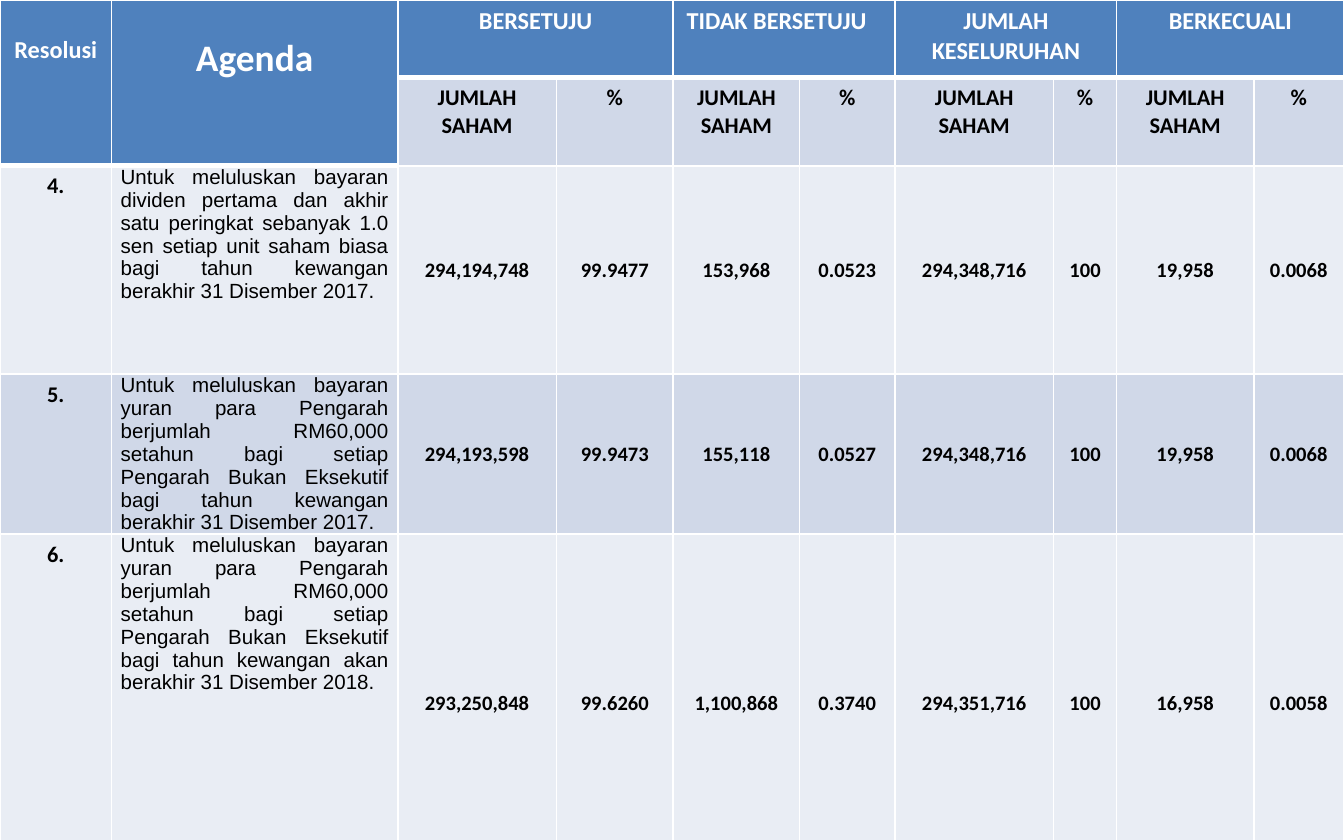
import pptx
import pptx.util
import pptx.dml.color
import pptx.enum.text
import pptx.oxml.ns
import lxml.etree

Pt = pptx.util.Pt
ALIGN = pptx.enum.text.PP_ALIGN
MIDDLE = pptx.enum.text.MSO_ANCHOR.MIDDLE
TOP = pptx.enum.text.MSO_ANCHOR.TOP

HUE = {"head": "4F81BD", "dark": "D0D8E8", "pale": "E9EDF4",
       "white": "FFFFFF", "black": "000000"}
COLS = [59.76, 153.36, 84.96, 62.64, 67.68, 51.12, 84.96, 33.84, 73.44, 48.24]
ROWS = [41.76, 46.08, 111.6, 76.32, 181.44]
GROUPS = ["BERSETUJU", "TIDAK BERSETUJU", "JUMLAH KESELURUHAN", "BERKECUALI"]
ITEMS = [
    ("4.", "Untuk meluluskan bayaran dividen pertama dan akhir satu peringkat "
     "sebanyak 1.0 sen setiap unit saham biasa bagi tahun kewangan berakhir "
     "31 Disember 2017.",
     "294,194,748 99.9477 153,968 0.0523 294,348,716 100 19,958 0.0068"),
    ("5.", "Untuk meluluskan bayaran yuran para Pengarah berjumlah RM60,000 "
     "setahun bagi setiap Pengarah Bukan Eksekutif bagi tahun kewangan "
     "berakhir 31 Disember 2017.",
     "294,193,598 99.9473 155,118 0.0527 294,348,716 100 19,958 0.0068"),
    ("6.", "Untuk meluluskan bayaran yuran para Pengarah berjumlah RM60,000 "
     "setahun bagi setiap Pengarah Bukan Eksekutif bagi tahun kewangan akan "
     "berakhir 31 Disember 2018.",
     "293,250,848 99.6260 1,100,868 0.3740 294,351,716 100 16,958 0.0058"),
]


def color(name):
    return pptx.dml.color.RGBColor.from_string(HUE[name])


def edge(cell, base):
    qn = pptx.oxml.ns.qn
    props = cell._tc.get_or_add_tcPr()
    for side in "LRTB":
        width = base if side == "B" else 1
        line = lxml.etree.SubElement(props, qn("a:ln" + side), w=str(Pt(width)))
        fill = lxml.etree.SubElement(line, qn("a:solidFill"))
        lxml.etree.SubElement(fill, qn("a:srgbClr"), val=HUE["white"])


def paint(cell, name, base=1):
    edge(cell, base)
    cell.fill.solid()
    cell.fill.fore_color.rgb = color(name)


def write(cell, text, size, ink="black", align=ALIGN.CENTER, font="Calibri",
          bold=True, pad=(7.2, 3.6), top=None, anchor=TOP):
    cell.margin_left = cell.margin_right = Pt(pad[0])
    cell.margin_bottom = Pt(pad[1])
    cell.margin_top = Pt(pad[1] if top is None else top)
    cell.vertical_anchor = anchor
    cell.text_frame.text = text
    para = cell.text_frame.paragraphs[0]
    para.alignment = align
    run = para.runs[0].font
    run.size, run.name, run.bold = Pt(size), font, bold
    run.color.rgb = color(ink)


def heads(grid):
    for col in range(len(COLS)):
        paint(grid.cell(0, col), "head", 3)
        paint(grid.cell(1, col), "head" if col < 2 else "dark", 3 if col < 2 else 1)
    for col, (text, size) in enumerate([("Resolusi", 13), ("Agenda", 20)]):
        grid.cell(0, col).merge(grid.cell(1, col))
        write(grid.cell(0, col), text, size, "white", top=19)
    for i, text in enumerate(GROUPS):
        col = 2 + 2 * i
        grid.cell(0, col).merge(grid.cell(0, col + 1))
        align = ALIGN.LEFT if i == 1 else ALIGN.CENTER
        write(grid.cell(0, col), text, 13, "white", align)
        write(grid.cell(1, col), "JUMLAH SAHAM", 12)
        write(grid.cell(1, col + 1), "%", 12)


def votes(grid):
    tight = (4.9, 0)
    for row, (mark, text, counts) in enumerate(ITEMS, 2):
        for col in range(len(COLS)):
            paint(grid.cell(row, col), "dark" if row % 2 else "pale")
        write(grid.cell(row, 0), mark, 12)
        write(grid.cell(row, 1), text, 11, align=ALIGN.JUSTIFY, font="Arial",
              bold=False, pad=tight)
        for col, count in enumerate(counts.split(), 2):
            write(grid.cell(row, col), count, 11, pad=tight, anchor=MIDDLE)


def results(slide, left, top, width, height):
    frame = slide.shapes.add_table(len(ROWS), len(COLS), Pt(left), Pt(top),
                                   Pt(width), Pt(height))
    grid = frame.table
    for col, size in zip(grid.columns, COLS):
        col.width = Pt(size)
    for row, size in zip(grid.rows, ROWS):
        row.height = Pt(size)
    heads(grid)
    votes(grid)


def main():
    deck = pptx.Presentation()
    deck.slide_width, deck.slide_height = Pt(720), Pt(450)
    slide = deck.slides.add_slide(deck.slide_layouts[6])
    results(slide, 0, 0, sum(COLS), sum(ROWS))
    deck.save("out.pptx")


if __name__ == "__main__":
    main()
